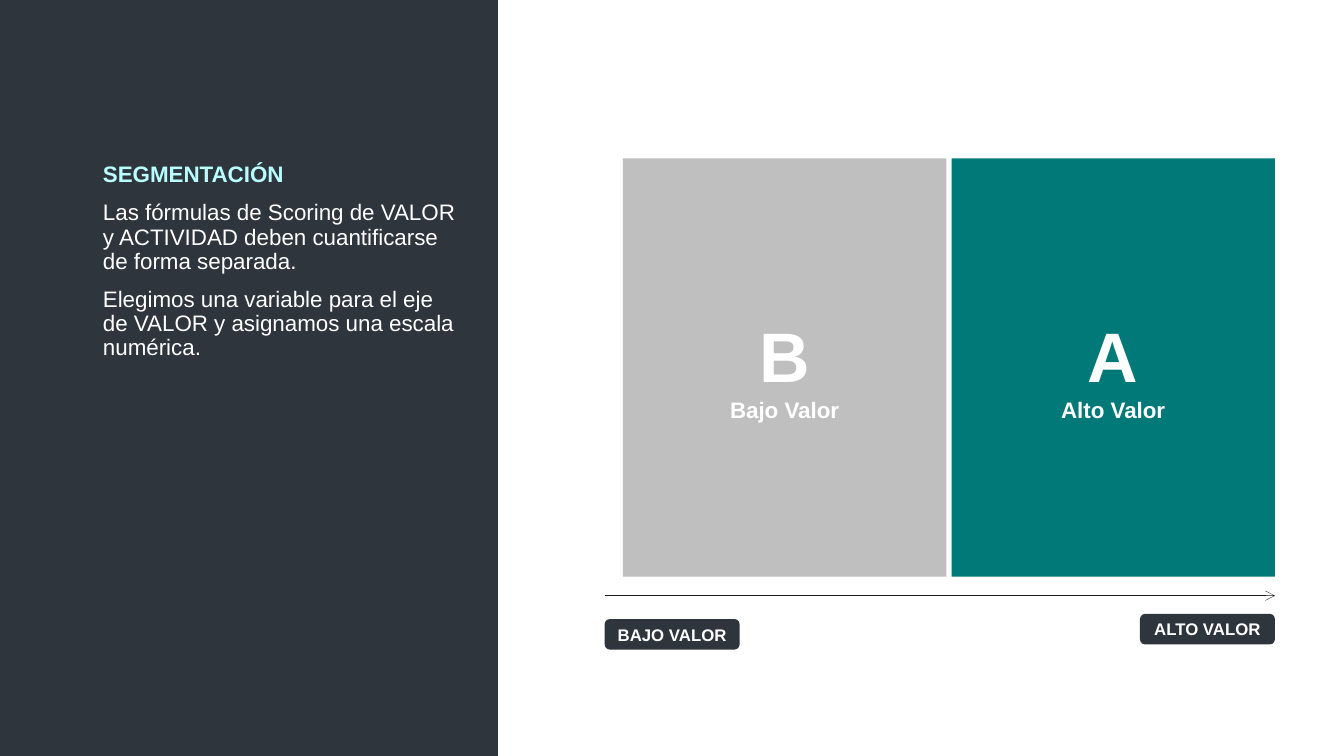
from lxml import etree
from pptx import Presentation
from pptx.dml.color import RGBColor
from pptx.enum import shapes, text
from pptx.oxml import ns
from pptx.util import Cm, Pt

DARK, TEAL, GREY = "2F353D", "017978", "BFBFBF"
WHITE, MINT, BLACK = "FFFFFF", "B9FFFF", "1C1C1C"
RECT = shapes.MSO_SHAPE.RECTANGLE
PILL = shapes.MSO_SHAPE.ROUNDED_RECTANGLE


def rgb(hex_code):
    return RGBColor.from_string(hex_code)


def write(p, words, size=16, color=WHITE, bold=True,
          align=text.PP_ALIGN.CENTER, spacing=1.0, before=0):
    p.alignment = align
    p.line_spacing = spacing
    p.space_before = Pt(before)
    r = p.add_run()
    r.text = words
    r.font.name = "Arial"
    r.font.size = Pt(size)
    r.font.bold = bold
    r.font.color.rgb = rgb(color)


def next_paragraph(tf, index):
    return tf.paragraphs[0] if index == 0 else tf.add_paragraph()


def add_block(s, kind, left, top, width, height, fill, lines=()):
    """Filled shape with centred lines given as (words, size)."""
    sp = s.shapes.add_shape(kind, Cm(left), Cm(top), Cm(width), Cm(height))
    sp.shadow.inherit = False
    sp.fill.solid()
    sp.fill.fore_color.rgb = rgb(fill)
    sp.line.fill.background()
    tf = sp.text_frame
    tf.word_wrap = True
    tf.vertical_anchor = text.MSO_ANCHOR.MIDDLE
    for i, (words, size) in enumerate(lines):
        write(next_paragraph(tf, i), words, size=size)


def add_arrow(s, x1, x2, y):
    line = s.shapes.add_connector(shapes.MSO_CONNECTOR.STRAIGHT,
                                  Cm(x1), Cm(y), Cm(x2), Cm(y))
    line.line.color.rgb = rgb(BLACK)
    line.line.width = Pt(0.25)
    etree.SubElement(line.line._get_or_add_ln(), ns.qn("a:tailEnd"), type="arrow")
    etree.SubElement(line._element.spPr, ns.qn("a:effectLst"))


def fill_body(sp, heading, paragraphs):
    sp.left, sp.top, sp.width, sp.height = Cm(2.34), Cm(3.99), Cm(9.4), Cm(13.16)
    tf = sp.text_frame
    tf.word_wrap = True
    tf.auto_size = text.MSO_AUTO_SIZE.NONE
    for i, words in enumerate([heading, *paragraphs]):
        p = next_paragraph(tf, i)
        pPr = p._p.get_or_add_pPr()
        pPr.set("marL", "0")
        pPr.set("indent", "0")
        etree.SubElement(pPr, ns.qn("a:buNone"))
        first = i == 0
        write(p, words, color=MINT if first else WHITE, bold=first,
              align=text.PP_ALIGN.LEFT, spacing=0.9, before=0 if first else 10)


def main():
    prs = Presentation()
    prs.slide_width, prs.slide_height = Cm(33.87), Cm(19.05)
    s = prs.slides.add_slide(prs.slide_layouts[1])
    body = s.placeholders[1]
    title = s.shapes.title._element
    title.getparent().remove(title)

    # Side panel, kept behind the body text
    add_block(s, RECT, 0, 0, 12.55, 19.05, DARK)
    body._element.getparent().append(body._element)
    fill_body(body, "SEGMENTACIÓN", [
        "Las fórmulas de Scoring de VALOR y ACTIVIDAD deben cuantificarse "
        "de forma separada.",
        "Elegimos una variable para el eje de VALOR y asignamos una escala "
        "numérica.",
    ])

    # Value segments
    segments = [("B", "Bajo Valor", GREY), ("A", "Alto Valor", TEAL)]
    for i, (letter, label, fill) in enumerate(segments):
        add_block(s, RECT, 15.7 + 8.28 * i, 3.99, 8.15, 10.54, fill,
                  [(letter, 50), (label, 16)])

    # Value axis and its end labels
    add_arrow(s, 15.24, 32.13, 15.01)
    for words, left, top in [("BAJO VALOR", 15.24, 15.6),
                             ("ALTO VALOR", 28.73, 15.47)]:
        add_block(s, PILL, left, top, 3.4, 0.77, DARK, [(words, 12)])

    prs.save("out.pptx")


if __name__ == "__main__":
    main()
